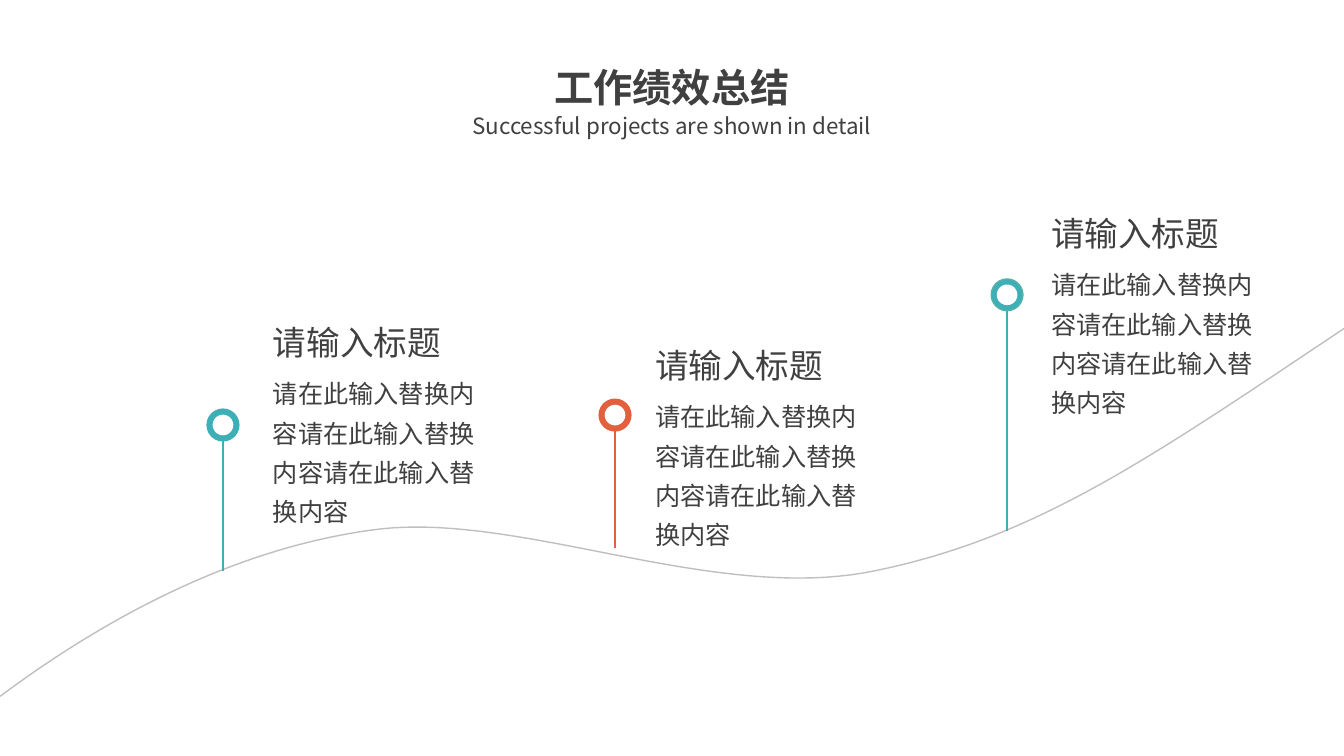
from dataclasses import dataclass

from lxml import etree
from pptx import Presentation
from pptx.dml.color import RGBColor
from pptx.enum import shapes, text
from pptx.oxml.ns import qn
from pptx.util import Cm, Pt


@dataclass(frozen=True)
class Theme:
    font: str = "Noto Sans CJK SC"
    ink: str = "404040"
    white: str = "FFFFFF"
    curve: str = "BFBFBF"
    teal: str = "3EAEB7"
    green: str = "55B2A5"
    orange: str = "E3603F"
    title: int = 28
    heading: int = 24
    body: int = 18
    subtitle: int = 16
    line: int = 1


THEME = Theme()
TITLE = "工作绩效总结"
SUBTITLE = "Successful projects are shown in detail"
HEADING = "请输入标题"
BODY = "请在此输入替换内容" * 3

PINS = [
    {"ring_y": 10.71, "foot_y": 14.38, "text": (6.63, 7.98), "color": THEME.teal, "edge": THEME.teal},
    {"ring_y": 10.46, "foot_y": 13.82, "text": (16.26, 8.56), "color": THEME.orange, "edge": THEME.orange},
    {"ring_y": 7.43, "foot_y": 13.39, "text": (26.24, 5.23), "color": THEME.teal, "edge": THEME.green},
]
CURVE_START = (0, 17.55)
CURVE = [
    ((2.39, 15.77), (5.66, 13.87), (9.35, 13.36)),
    ((13.03, 12.83), (17.98, 15.24), (22.07, 14.38)),
    ((26.16, 13.54), (29.03, 11.51), (33.87, 8.28)),
]

SLIDE_WIDTH, SLIDE_HEIGHT = 33.87, 19.05
FIRST_PIN_X, PIN_STEP = 5.62, 9.88
RING, HOLE = 0.8, 0.52
BODY_DROP = 1.21
CURVE_STEPS = 40


def rgb(color):
    return RGBColor.from_string(color)


def bezier(points, t):
    weights = ((1 - t) ** 3, 3 * t * (1 - t) ** 2, 3 * t * t * (1 - t), t ** 3)
    return tuple(Cm(sum(w * p[axis] for w, p in zip(weights, points))) for axis in (0, 1))


def draw_curve(page):
    start, vertices = CURVE_START, []
    for segment in CURVE:
        points = (start, *segment)
        vertices += [bezier(points, step / CURVE_STEPS) for step in range(1, CURVE_STEPS + 1)]
        start = segment[-1]
    builder = page.shapes.build_freeform(*map(Cm, CURVE_START))
    builder.add_line_segments(vertices, close=False)
    curve = builder.convert_to_shape()
    curve.shadow.inherit = False
    curve.fill.background()
    curve.line.color.rgb = rgb(THEME.curve)
    curve.line.width = Pt(THEME.line)


def add_text(group, words, place, size, align=text.PP_ALIGN.LEFT, bold=False, spacing=None):
    box = group.shapes.add_textbox(*map(Cm, place))
    box.text_frame.word_wrap = True
    para = box.text_frame.paragraphs[0]
    para.text = words
    para.alignment = align
    para.line_spacing = spacing
    para.font.size = Pt(size)
    para.font.bold = bold
    para.font.color.rgb = rgb(THEME.ink)
    para.font.name = THEME.font
    defaults = para._p.pPr.find(qn("a:defRPr"))
    etree.SubElement(defaults, qn("a:ea")).set("typeface", THEME.font)


def add_circle(group, x, y, diameter, fill, edge=None):
    corner = (x - diameter / 2, y - diameter / 2)
    circle = group.shapes.add_shape(shapes.MSO_SHAPE.OVAL, *map(Cm, (*corner, diameter, diameter)))
    circle.shadow.inherit = False
    circle.fill.solid()
    circle.fill.fore_color.rgb = rgb(fill)
    if edge:
        circle.line.color.rgb = rgb(edge)
        circle.line.width = Pt(THEME.line)
    else:
        circle.line.fill.background()


def draw_pin(page, x, pin):
    group = page.shapes.add_group_shape()
    ends = (x, pin["foot_y"], x, pin["ring_y"] + RING / 2)
    stem = group.shapes.add_connector(shapes.MSO_CONNECTOR.STRAIGHT, *map(Cm, ends))
    stem.line.color.rgb = rgb(pin["color"])
    stem.line.width = Pt(THEME.line)
    etree.SubElement(stem._element.spPr, qn("a:effectLst"))
    add_circle(group, x, pin["ring_y"], RING, pin["color"], pin["edge"])
    add_circle(group, x, pin["ring_y"], HOLE, THEME.white)
    left, top = pin["text"]
    add_text(group, HEADING, (left, top, 4.83, 1.27), THEME.heading)
    add_text(group, BODY, (left, top + BODY_DROP, 5.66, 4.27), THEME.body, spacing=1.3)


def draw_title(page):
    group = page.shapes.add_group_shape()
    center = text.PP_ALIGN.CENTER
    for words, top, width, height, size, bold in [
        (TITLE, 1.47, 7.72, 1.45, THEME.title, True),
        (SUBTITLE, 2.69, 11.81, 0.94, THEME.subtitle, False),
    ]:
        place = ((SLIDE_WIDTH - width) / 2, top, width, height)
        add_text(group, words, place, size, center, bold)


def main():
    deck = Presentation()
    deck.slide_width, deck.slide_height = Cm(SLIDE_WIDTH), Cm(SLIDE_HEIGHT)
    page = deck.slides.add_slide(deck.slide_layouts[6])
    draw_curve(page)
    for index, pin in enumerate(PINS):
        draw_pin(page, FIRST_PIN_X + index * PIN_STEP, pin)
    draw_title(page)
    deck.save("out.pptx")


if __name__ == "__main__":
    main()
